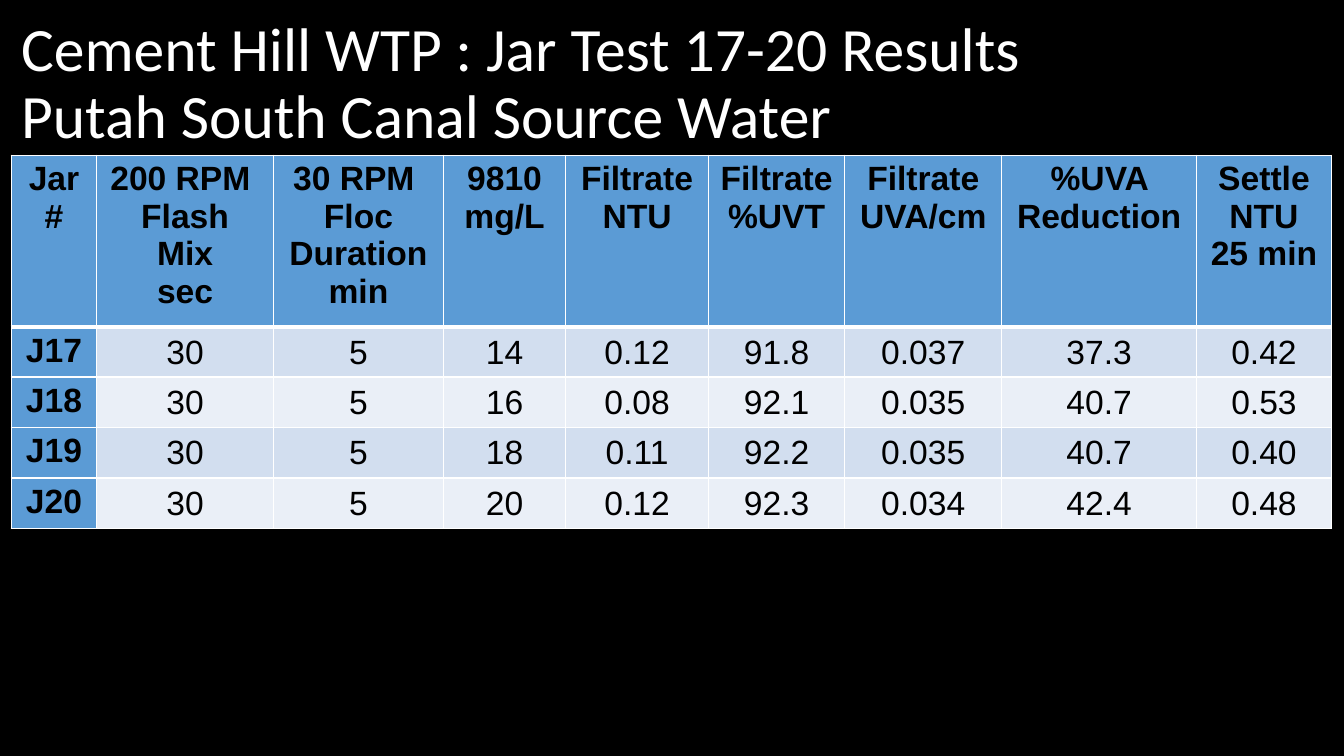
from lxml import etree
from pptx import Presentation
from pptx.dml.color import RGBColor
from pptx.enum.text import MSO_ANCHOR, PP_ALIGN
from pptx.oxml.ns import qn
from pptx.util import Pt

BLACK = RGBColor(0x00, 0x00, 0x00)
WHITE = RGBColor(0xFF, 0xFF, 0xFF)
BLUE = RGBColor(0x5B, 0x9B, 0xD5)
BANDS = (RGBColor(0xD2, 0xDE, 0xEF), RGBColor(0xEA, 0xEF, 0xF7))
TOP, MIDDLE = MSO_ANCHOR.TOP, MSO_ANCHOR.MIDDLE
LEFT, CENTER = PP_ALIGN.LEFT, PP_ALIGN.CENTER

TITLE = "Cement Hill WTP : Jar Test 17-20 Results\vPutah South Canal Source Water"
HEADERS = [
    "Jar\n#", "200 RPM \nFlash\nMix\nsec", "30 RPM \nFloc\nDuration\nmin",
    "9810\nmg/L", "Filtrate\nNTU", "Filtrate\n%UVT", "Filtrate\nUVA/cm",
    "%UVA Reduction", "Settle\nNTU\n25 min",
]
RESULTS = [
    ["J17", "30", "5", "14", "0.12", "91.8", "0.037", "37.3", "0.42"],
    ["J18", "30", "5", "16", "0.08", "92.1", "0.035", "40.7", "0.53"],
    ["J19", "30", "5", "18", "0.11", "92.2", "0.035", "40.7", "0.40"],
    ["J20", "30", "5", "20", "0.12", "92.3", "0.034", "42.4", "0.48"],
]
COL_WIDTHS = [61.2, 126, 121.7, 87.1, 102.2, 97.2, 112.3, 139, 96.5]
HEADER_HEIGHT, ROW_HEIGHT = 114.4, 34


class SlideBuilder:
    title_font, title_size = "Calibri", 44
    table_font, table_size = "Arial", 24

    def __init__(self, slide):
        self.slide = slide

    def background(self, color):
        fill = self.slide.background.fill
        fill.solid()
        fill.fore_color.rgb = color

    def set_text(self, tf, text, font, size, color, align, bold=False):
        tf.text = text
        for p in tf.paragraphs:
            p.alignment = align
            p.font.name = font
            p.font.size = Pt(size)
            p.font.bold = bold
            p.font.color.rgb = color

    def title(self, text, x, y, w, h):
        tf = self.slide.shapes.add_textbox(Pt(x), Pt(y), Pt(w), Pt(h)).text_frame
        tf.word_wrap = True
        tf.vertical_anchor = MIDDLE
        self.set_text(tf, text, self.title_font, self.title_size, WHITE, LEFT)
        tf.paragraphs[0].line_spacing = 0.9

    def borders(self, cell, top, bottom):
        tc_pr = cell._tc.get_or_add_tcPr()
        for side, width in (("L", 1), ("R", 1), ("T", top), ("B", bottom)):
            ln = etree.SubElement(tc_pr, qn(f"a:ln{side}"), w=str(Pt(width)))
            fill = etree.SubElement(ln, qn("a:solidFill"))
            etree.SubElement(fill, qn("a:srgbClr"), val=str(WHITE))

    def cell(self, cell, text, row, col):
        heading = row == 0 or col == 0
        side, top, bottom = (7.2, 3.6, 3.6) if heading else (0.7, 0.7, 0)
        cell.margin_left = cell.margin_right = Pt(side)
        cell.margin_top, cell.margin_bottom = Pt(top), Pt(bottom)
        cell.vertical_anchor = TOP if heading else MIDDLE
        self.borders(cell, 3 if row == 1 else 1, 3 if row == 0 else 1)
        cell.fill.solid()
        cell.fill.fore_color.rgb = BLUE if heading else BANDS[(row - 1) % 2]
        self.set_text(cell.text_frame, text, self.table_font, self.table_size,
                      BLACK, CENTER, heading)

    def table(self, rows, x, y, widths, heights):
        table = self.slide.shapes.add_table(
            len(rows), len(widths), Pt(x), Pt(y), Pt(sum(widths)), Pt(sum(heights))
        ).table
        for column, width in zip(table.columns, widths):
            column.width = Pt(width)
        for table_row, height in zip(table.rows, heights):
            table_row.height = Pt(height)
        for i, values in enumerate(rows):
            for j, text in enumerate(values):
                self.cell(table.cell(i, j), text, i, j)


def main():
    prs = Presentation()
    prs.slide_width, prs.slide_height = Pt(960), Pt(540)
    s = SlideBuilder(prs.slides.add_slide(prs.slide_layouts[6]))
    s.background(BLACK)
    s.title(TITLE, 8, 8.6, 885.6, 104.4)
    heights = [HEADER_HEIGHT] + [ROW_HEIGHT] * len(RESULTS)
    s.table([HEADERS] + RESULTS, 8, 110.9, COL_WIDTHS, heights)
    prs.save("out.pptx")


if __name__ == "__main__":
    main()
